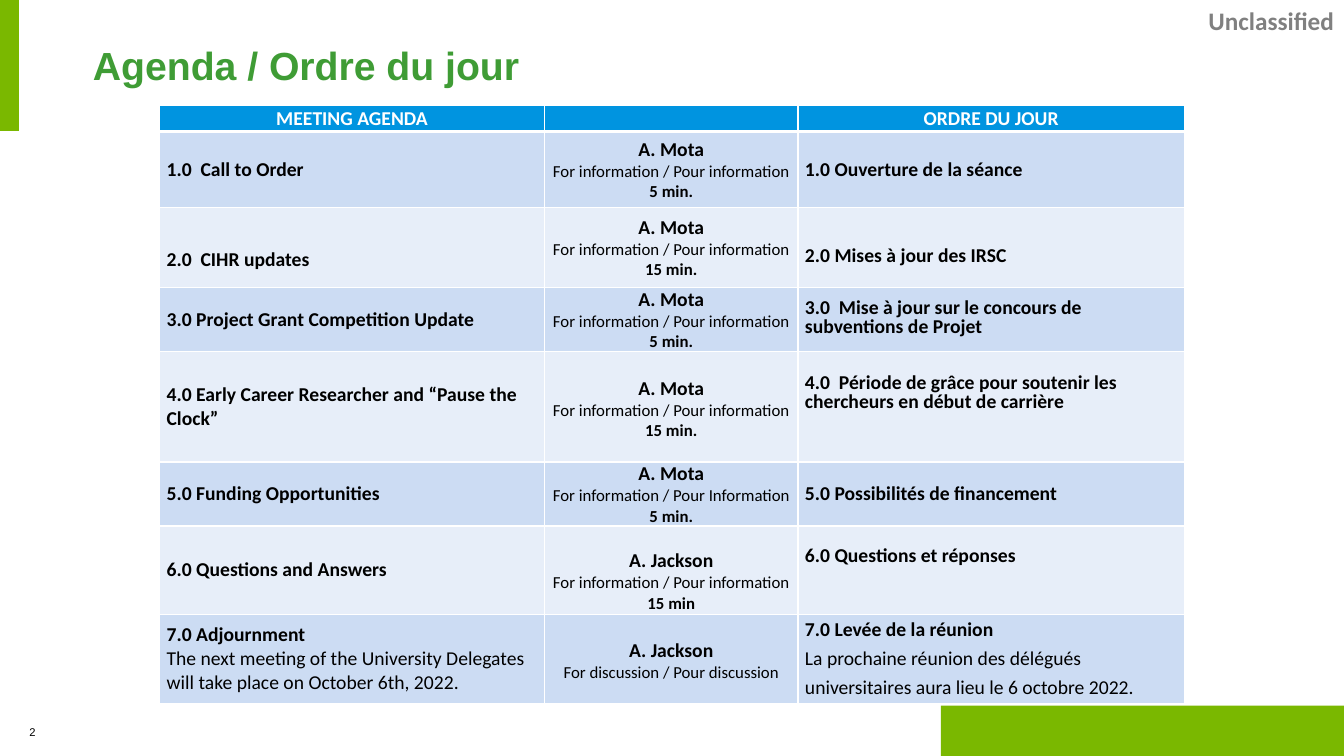
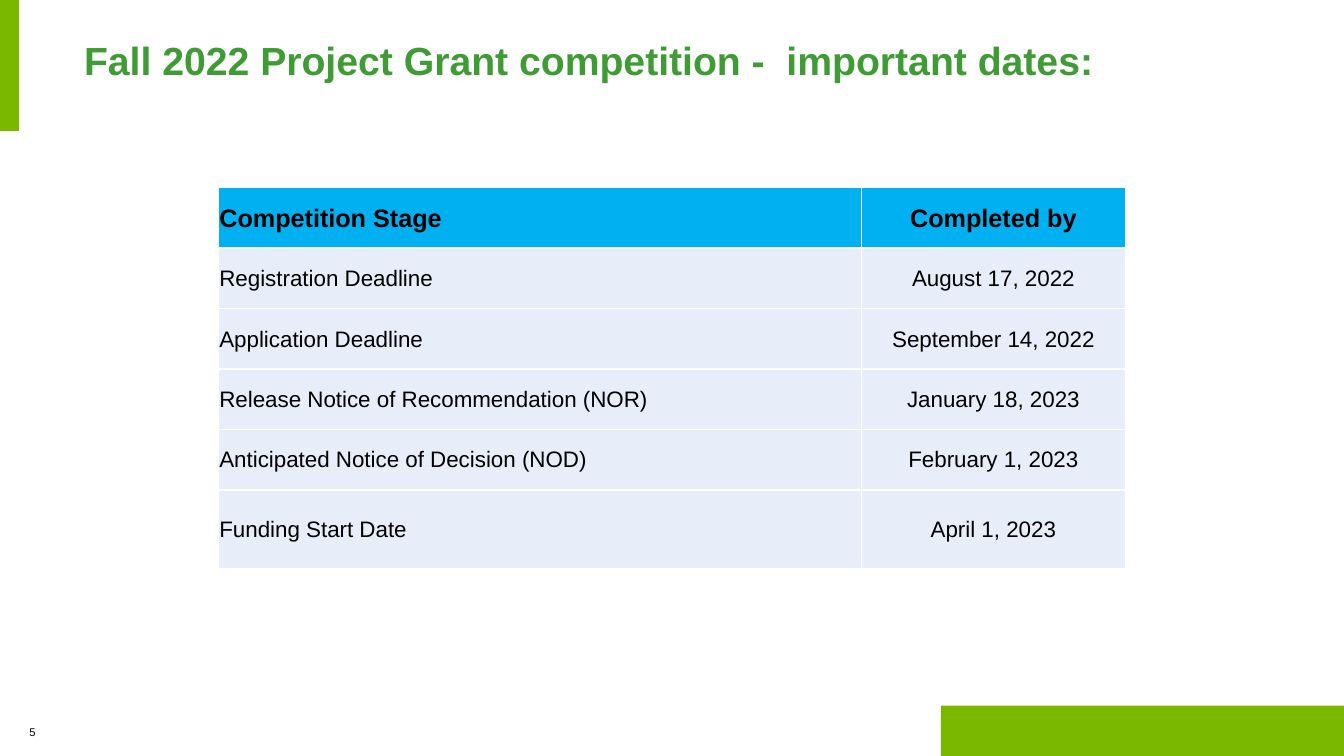
from lxml import etree
from pptx import Presentation
from pptx.dml.color import RGBColor
from pptx.enum import shapes, text as txt
from pptx.oxml.ns import qn
from pptx.util import Pt

COLORS = {
    "green": "7AB800", "title": "3F9C35", "grey": "808080",
    "white": "FFFFFF", "black": "000000", "header": "0094E0",
    "sky": "00B0F0", "dark_row": "CCDCF3", "light_row": "E7EEF9",
}
LEFT, CENTER, RIGHT = txt.PP_ALIGN.LEFT, txt.PP_ALIGN.CENTER, txt.PP_ALIGN.RIGHT
WIDTH, HEIGHT = 960, 540

INFO = "For information / Pour information"
EXACT = {"spacing": Pt(13.6)}
PLAIN = {"bold": False}
# English lines, presenter lines, French lines, row height
AGENDA = [
    ([("1.0  Call to Order", {})],
     ["A. Mota", INFO, "5 min."],
     [("1.0 Ouverture de la séance", {})], 54.5),
    ([("2.0  CIHR updates", {})],
     ["A. Mota", INFO, "15 min."],
     [("2.0 Mises à jour des IRSC", {})], 57),
    ([("3.0 Project Grant Competition Update", {})],
     ["A. Mota", INFO, "5 min."],
     [("3.0  Mise à jour sur le concours de subventions de Projet", EXACT)], 45.5),
    ([("4.0 Early Career Researcher and “Pause the Clock”", {})],
     ["A. Mota", INFO, "15 min."],
     [("4.0  Période de grâce pour soutenir les chercheurs en début de carrière", EXACT)], 79),
    ([("5.0 Funding Opportunities", {})],
     ["A. Mota", "For information / Pour Information", "5 min."],
     [("5.0 Possibilités de financement", {})], 45.5),
    ([("6.0 Questions and Answers", {})],
     ["A. Jackson", INFO, "15 min"],
     [("6.0 Questions et réponses", EXACT)], 63),
    ([("7.0 Adjournment", {}),
      ("The next meeting of the University Delegates will take place on October 6th, 2022.", PLAIN)],
     ["A. Jackson", "For discussion / Pour discussion"],
     [("7.0 Levée de la réunion", {}),
      ("La prochaine réunion des délégués universitaires aura lieu le 6 octobre 2022.",
       {"bold": False, "spacing": Pt(20.5)})], 64),
]
# (row, column): top and bottom margin that move the text off centre
AGENDA_SHIFTS = {
    (2, 0): (17, 0), (2, 2): (12, 0), (4, 1): (3, 0), (4, 2): (0, 17),
    (6, 1): (16, 0), (6, 2): (0, 17), (7, 1): (3, 0),
}
DATES = [
    ("Competition Stage", "Completed by"),
    ("Registration Deadline", "August 17, 2022"),
    ("Application Deadline", "September 14, 2022"),
    ("Release Notice of Recommendation (NOR)", "January 18, 2023"),
    ("Anticipated Notice of Decision (NOD)", "February 1, 2023"),
    ("Funding Start Date", "April 1, 2023"),
]


def rgb(name):
    return RGBColor.from_string(COLORS[name])


def write_line(frame, words, size=14, font="Calibri", color="black",
               bold=True, align=LEFT, spacing=None):
    """Fill the first empty paragraph of the frame, or add one."""
    para = frame.paragraphs[-1]
    if para.runs:
        para = frame.add_paragraph()
    para.alignment = align
    if spacing:
        para.line_spacing = spacing
    span = para.add_run()
    span.text = words
    span.font.size, span.font.name, span.font.bold = Pt(size), font, bold
    span.font.color.rgb = rgb(color)


def add_text(page, box, words, insets=(7.2, 3.6, 7.2, 3.6),
             anchor=txt.MSO_ANCHOR.MIDDLE, **format):
    frame = page.shapes.add_textbox(*map(Pt, box)).text_frame
    frame.word_wrap = True
    frame.vertical_anchor = anchor
    (frame.margin_left, frame.margin_top,
     frame.margin_right, frame.margin_bottom) = map(Pt, insets)
    write_line(frame, words, **format)


def add_band(page, box):
    band = page.shapes.add_shape(shapes.MSO_SHAPE.RECTANGLE, *map(Pt, box))
    band.shadow.inherit = False
    band.fill.solid()
    band.fill.fore_color.rgb = rgb("green")
    band.line.fill.background()


def add_page(deck, number, title, title_box):
    """Blank page with the shared bands, page number and title."""
    page = deck.slides.add_slide(deck.slide_layouts[6])
    add_band(page, (0, 0, 13.5, 93.6))
    add_band(page, (WIDTH - 288, HEIGHT - 36, 288, 36))
    add_text(page, (21, HEIGHT - 36, 35, 36), number, insets=(0, 3.6, 0, 0),
             size=8, font="Arial", bold=False, spacing=0.9)
    add_text(page, title_box, title, insets=(36, 7.2, 7.2, 7.2),
             size=28, font="Arial", color="title")
    return page


def add_grid(page, left, top, widths, heights):
    table = page.shapes.add_table(
        len(heights), len(widths), Pt(left), Pt(top),
        Pt(sum(widths)), Pt(sum(heights))).table
    table.first_row = table.horz_banding = False
    for column, width in zip(table.columns, widths):
        column.width = Pt(width)
    for row, height in zip(table.rows, heights):
        row.height = Pt(height)
    return table


def style_cell(cell, fill, side, shift=(0, 0), top_edge=1, bottom_edge=1):
    cell.vertical_anchor = txt.MSO_ANCHOR.MIDDLE
    cell.margin_left = cell.margin_right = Pt(side)
    cell.margin_top, cell.margin_bottom = map(Pt, shift)
    properties = cell._tc.get_or_add_tcPr()
    for edge, width in zip("LRTB", (1, 1, top_edge, bottom_edge)):
        line = etree.SubElement(properties, qn("a:ln" + edge), w=str(Pt(width)))
        solid = etree.SubElement(line, qn("a:solidFill"))
        etree.SubElement(solid, qn("a:srgbClr"), val=COLORS["white"])
    cell.fill.solid()
    cell.fill.fore_color.rgb = rgb(fill)


def add_agenda(page, left, top):
    heights = [19] + [entry[-1] for entry in AGENDA]
    table = add_grid(page, left, top, (275, 181, 276), heights)

    # Header row
    for column, words in enumerate(("MEETING AGENDA", "", "ORDRE DU JOUR")):
        cell = table.cell(0, column)
        style_cell(cell, "header", 5, bottom_edge=3)
        if words:
            write_line(cell.text_frame, words, color="white", align=CENTER)
        else:
            # Keeps the empty cell from stretching the row
            etree.SubElement(cell.text_frame.paragraphs[0]._p,
                             qn("a:endParaRPr"), sz="1400")

    # Agenda items
    for row, (english, presenter, french, _) in enumerate(AGENDA, 1):
        middle = [(words, {"size": 12 if index else 14, "bold": index != 1,
                           "align": CENTER})
                  for index, words in enumerate(presenter)]
        for column, lines in enumerate((english, middle, french)):
            cell = table.cell(row, column)
            style_cell(cell, "dark_row" if row % 2 else "light_row", 5,
                       shift=AGENDA_SHIFTS.get((row, column), (0, 0)),
                       top_edge=3 if row == 1 else 1)
            for words, format in lines:
                write_line(cell.text_frame, words, **format)


def add_dates(page, left, top):
    table = add_grid(page, left, top, (459.2, 188.8), [43.2] * 5 + [56.2])
    for row, entry in enumerate(DATES):
        header = row == 0
        for column, words in enumerate(entry):
            cell = table.cell(row, column)
            style_cell(cell, "sky" if header else "light_row", 0.7, shift=(0.7, 0))
            write_line(cell.text_frame, words, size=18 if header else 16,
                       font="Arial", bold=header,
                       align=CENTER if column else LEFT)


def main():
    deck = Presentation()
    deck.slide_width, deck.slide_height = Pt(WIDTH), Pt(HEIGHT)

    # Agenda
    page = add_page(deck, "2", "Agenda / Ordre du jour", (30.4, 22, 641, 48))
    add_agenda(page, 114, 75)
    add_text(page, (804, 0, 156, 29), "Unclassified", size=18, color="grey",
             align=RIGHT, anchor=txt.MSO_ANCHOR.TOP)

    # Important dates
    page = add_page(deck, "5", "Fall 2022 Project Grant competition -  important dates:",
                    (24, 18.5, 846, 48))
    add_dates(page, 156, 134)

    deck.save("out.pptx")


if __name__ == "__main__":
    main()
